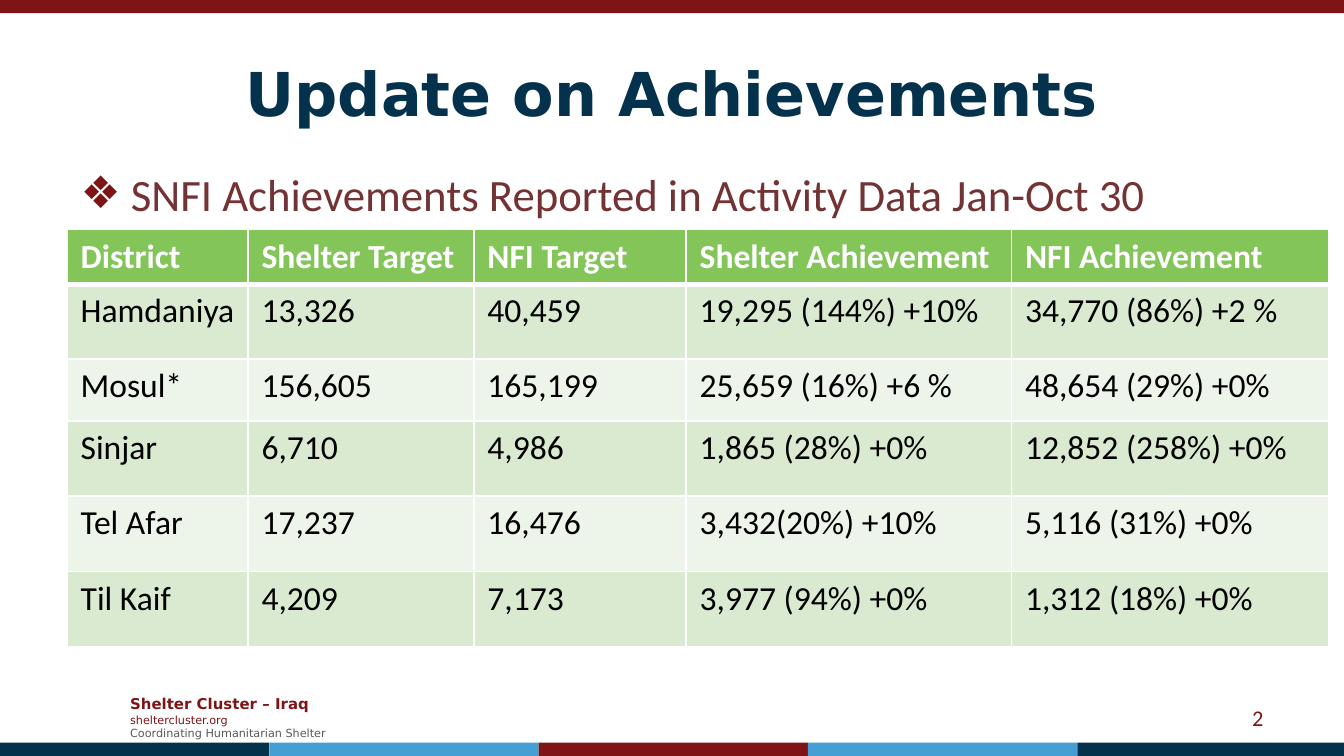
"""Build the slide on shelter and NFI achievements by district."""
from itertools import cycle
from lxml.etree import SubElement as Sub
from pptx import Presentation
from pptx.dml.color import RGBColor as Rgb
from pptx.enum.shapes import MSO_SHAPE as Kind
from pptx.enum.text import MSO_ANCHOR as Anchor, MSO_AUTO_SIZE as Fit, PP_ALIGN as Align
from pptx.oxml import parse_xml
from pptx.oxml.ns import nsdecls, qn
from pptx.util import Cm, Pt

RED, NAVY, BLUE = "7F1416", "04314C", "459FD5"
SANS, BODY = "DejaVu Sans", "Calibri"
HEAD, DARK, PALE = "84C559", "D9EAD1", "EDF5EA"
COLS = [3.42, 4.27, 4.01, 6.15, 6]
HIGH = [0.94, 1.42, 1.17, 1.42, 1.42, 1.42]
ROWS = [
    ["District", "Shelter Target", "NFI Target", "Shelter Achievement", "NFI Achievement"],
    ["Hamdaniya", "13,326", "40,459", "19,295 (144%) +10%", "34,770 (86%) +2 %"],
    ["Mosul*", "156,605", "165,199", "25,659 (16%) +6 %", "48,654 (29%) +0%"],
    ["Sinjar", "6,710", "4,986", "1,865 (28%) +0%", "12,852 (258%) +0%"],
    ["Tel Afar", "17,237", "16,476", "3,432(20%) +10%", "5,116 (31%) +0%"],
    ["Til Kaif", "4,209", "7,173", "3,977 (94%) +0%", "1,312 (18%) +0%"],
]


def paint(fill, tone):
    fill.solid()
    fill.fore_color.rgb = Rgb.from_string(tone)


def write(para, text, size=18, tone="000000", face=BODY, bold=False, align=Align.LEFT):
    para.alignment = align
    run = para.add_run()
    run.text = text
    font = run.font
    font.size, font.name, font.bold = Pt(size), face, bold
    paint(font.fill, tone)


def mark(para, sign, tone, dent):
    props = para._p.get_or_add_pPr()
    props.set("marL", str(Cm(dent)))
    props.set("indent", str(-Cm(dent)))
    Sub(Sub(props, qn("a:buClr")), qn("a:srgbClr"), val=tone)
    Sub(props, qn("a:buChar"), char=sign)


def edge(cell, base):
    props = cell._tc.get_or_add_tcPr()
    for spot, (side, wide) in enumerate(zip("LRTB", (1, 1, 1, base))):
        props.insert(spot, parse_xml(
            f'<a:ln{side} {nsdecls("a")} w="{Pt(wide)}"><a:solidFill>'
            f'<a:srgbClr val="FFFFFF"/></a:solidFill></a:ln{side}>'))


class Deck:
    def __init__(self):
        self.show = Presentation()
        self.show.slide_width, self.show.slide_height = Cm(25.4), Cm(14.29)
        self.slide = self.show.slides.add_slide(self.show.slide_layouts[1])
        self.shapes = self.slide.shapes

    def bar(self, x, y, w, h, tone):
        shape = self.shapes.add_shape(Kind.RECTANGLE, Cm(x), Cm(y), Cm(w), Cm(h))
        shape.shadow.inherit = False
        paint(shape.fill, tone)
        shape.line.fill.background()

    def holder(self, spot, x, y, w, h, anchor):
        shape = self.slide.placeholders[spot]
        shape.left, shape.top, shape.width, shape.height = Cm(x), Cm(y), Cm(w), Cm(h)
        frame = shape.text_frame
        frame.auto_size, frame.vertical_anchor = Fit.NONE, anchor
        return frame.paragraphs[0]

    def text(self, x, y, w, h, lines, **style):
        frame = self.shapes.add_textbox(Cm(x), Cm(y), Cm(w), Cm(h)).text_frame
        frame.word_wrap, frame.vertical_anchor = True, Anchor.MIDDLE
        for spot, (line, look) in enumerate(lines):
            para = frame.add_paragraph() if spot else frame.paragraphs[0]
            write(para, line, **{**style, **look})

    def table(self, x, y, rows, cols, high):
        grid = self.shapes.add_table(
            len(rows), len(cols), Cm(x), Cm(y), Cm(sum(cols)), Cm(sum(high))).table
        for col, wide in zip(grid.columns, cols):
            col.width = Cm(wide)
        for r, (row, tall) in enumerate(zip(rows, high)):
            grid.rows[r].height = Cm(tall)
            top = r == 0
            tone = HEAD if top else DARK if r % 2 else PALE
            for c, word in enumerate(row):
                cell = grid.cell(r, c)
                paint(cell.fill, tone)
                edge(cell, 3 if top else 1)
                write(cell.text_frame.paragraphs[0], word, bold=top,
                      tone="FFFFFF" if top else "000000")


def main():
    deck = Deck()
    deck.bar(0, 0, 25.4, 0.25, RED)
    for spot, tone in zip(range(5), cycle([NAVY, BLUE, RED, BLUE])):
        deck.bar(spot * 5.09, 14.04, 5.09, 0.25, tone)

    title = deck.holder(0, 1.27, 0.97, 22.86, 1.55, Anchor.MIDDLE)
    write(title, "Update on Achievements", size=32.4, tone=NAVY, face=SANS,
          bold=True, align=Align.CENTER)
    point = deck.holder(1, 1.27, 3.02, 22.86, 9.42, Anchor.TOP)
    mark(point, "❖", RED, 0.95)
    point.space_before = Pt(0)
    write(point, "SNFI Achievements Reported in Activity Data Jan-Oct 30",
          size=24, tone="733234")

    deck.table(1.27, 4.34, ROWS, COLS, HIGH)
    deck.text(2.21, 13, 4.4, 1.12, [
        ("Shelter Cluster – Iraq", {"size": 8, "bold": True}),
        ("sheltercluster.org", {}),
        ("Coordinating Humanitarian Shelter", {"tone": "595959"}),
    ], size=6, tone=RED, face=SANS)
    deck.text(18.21, 13.18, 5.92, 0.76, [("2", {})], size=12, tone=RED, align=Align.RIGHT)
    deck.show.save("out.pptx")


if __name__ == "__main__":
    main()
